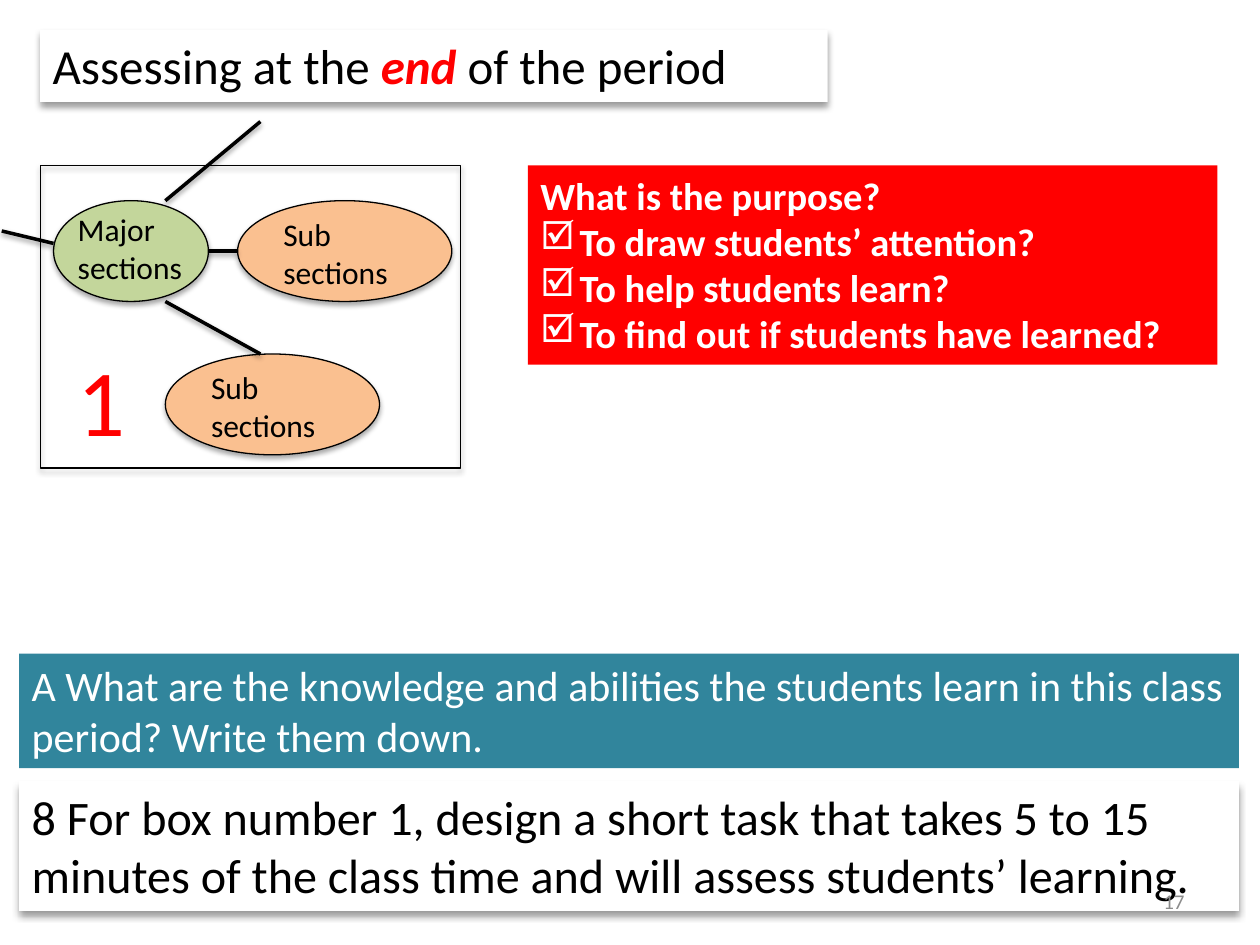
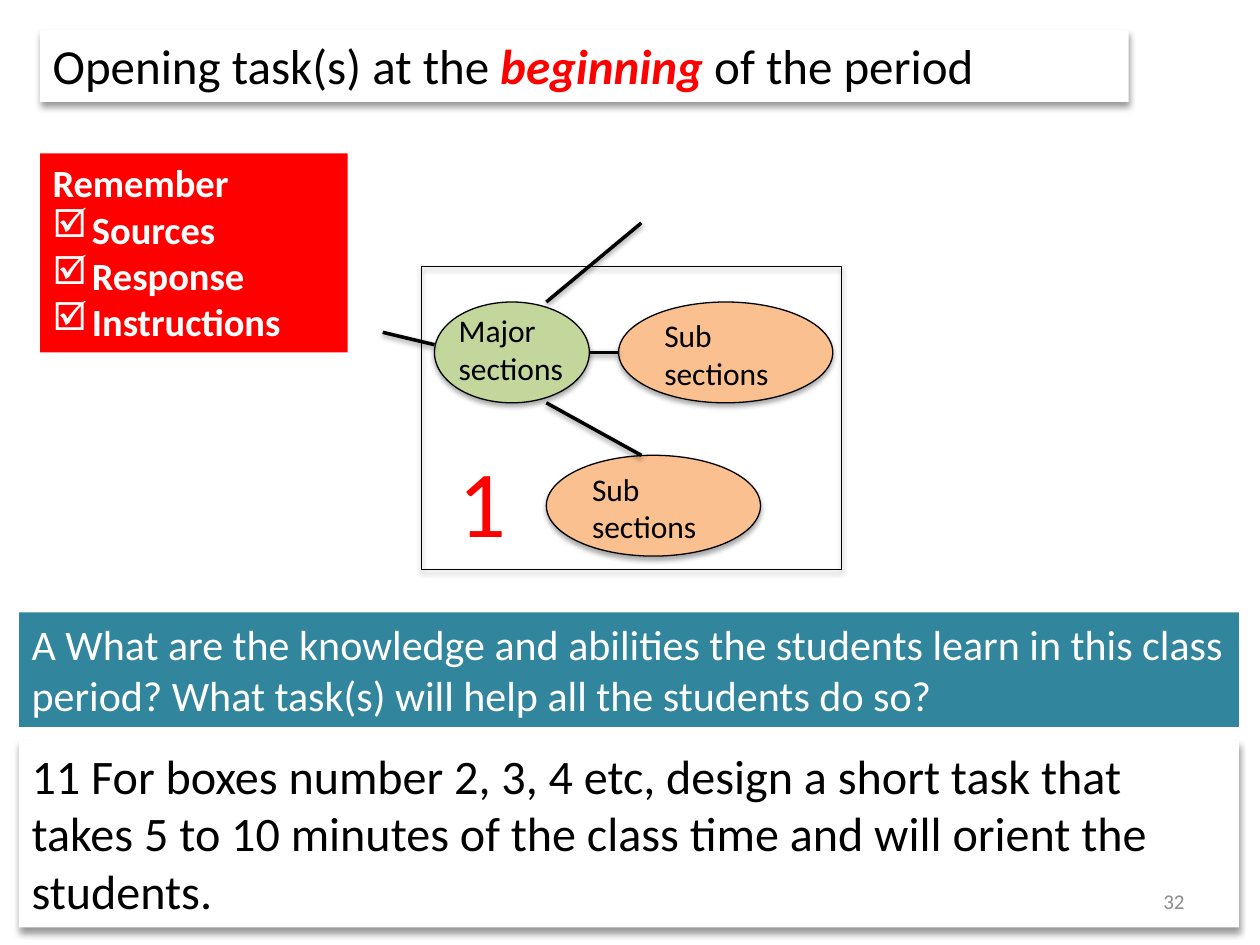
from lxml.etree import SubElement
from pptx import Presentation
from pptx.dml.color import RGBColor
from pptx.enum.shapes import MSO_CONNECTOR, MSO_SHAPE
from pptx.enum.text import MSO_ANCHOR, MSO_AUTO_SIZE, PP_ALIGN
from pptx.oxml.ns import qn
from pptx.util import Pt

BLACK = RGBColor(0x00, 0x00, 0x00)
WHITE = RGBColor(0xFF, 0xFF, 0xFF)
RED = RGBColor(0xFF, 0x00, 0x00)
TEAL = RGBColor(0x31, 0x85, 0x9C)
GREEN = RGBColor(0xC3, 0xD6, 0x9B)
PEACH = RGBColor(0xFA, 0xC0, 0x90)
GREY = RGBColor(0x8C, 0x8C, 0x8C)

# Shadows: opacity in percent, blur and distance in points
PANEL = (40, 4, 3)
SHAPE = (35, 3.1, 1.8)
LINE = (38, 3.1, 1.6)

MARGIN = 23
BAND_LEFT, BAND_WIDTH = 11, 697
FRAME = (240, 173)
MAJOR = (88.5, 57.6)
SUB = (122.4, 57.6)
LABEL = (76.4, 51)


def write(shape, text, size=18, color=BLACK, bold=False, bullet=None,
          align=PP_ALIGN.LEFT, anchor=MSO_ANCHOR.TOP, grow=True):
    """One paragraph a line; *starred* words are red, bold and italic.

    With a bullet, every line after the first is a list item.
    """
    frame = shape.text_frame
    frame.word_wrap = True
    frame.vertical_anchor = anchor
    if grow:
        frame.auto_size = MSO_AUTO_SIZE.SHAPE_TO_FIT_TEXT
    for row, line in enumerate(text.split("\n")):
        para = frame.paragraphs[0] if row == 0 else frame.add_paragraph()
        para.alignment = align
        if bullet and row:
            props = para._p.get_or_add_pPr()
            props.set("marL", str(Pt(22.5)))
            props.set("indent", str(-Pt(22.5)))
            SubElement(props, qn("a:buChar"), char=bullet)
        for part, words in enumerate(line.split("*")):
            strong = part % 2 == 1
            run = para.add_run()
            run.text = words
            font = run.font
            font.name = "Calibri"
            font.size = Pt(size)
            font.bold = bold or strong
            font.italic = strong
            font.color.rgb = RED if strong else color


def shade(effects, shadow):
    alpha, blur, dist = shadow
    outer = SubElement(effects, qn("a:outerShdw"), blurRad=str(Pt(blur)),
                       dist=str(Pt(dist)), dir="5400000", rotWithShape="0")
    color = SubElement(outer, qn("a:srgbClr"), val=str(BLACK))
    SubElement(color, qn("a:alpha"), val=str(alpha * 1000))


class Deck:
    def __init__(self):
        self.show = Presentation()
        self.show.slide_width = Pt(720)
        self.show.slide_height = Pt(540)
        self.slide = None

    def page(self):
        self.slide = self.show.slides.add_slide(self.show.slide_layouts[6])

    def shape(self, kind, left, top, area, fill=None, line=None, shadow=None):
        wide, high = area
        shape = self.slide.shapes.add_shape(
            kind, Pt(left), Pt(top), Pt(wide), Pt(high))
        if fill is None:
            shape.fill.background()
        else:
            shape.fill.solid()
            shape.fill.fore_color.rgb = fill
        if line is None:
            shape.line.fill.background()
        else:
            shape.line.color.rgb = line
            shape.line.width = Pt(0.75)
        shape.shadow.inherit = False
        if shadow:
            shade(shape._element.spPr.find(qn("a:effectLst")), shadow)
        return shape

    def label(self, text, left, top, area, **style):
        wide, high = area
        box = self.slide.shapes.add_textbox(
            Pt(left), Pt(top), Pt(wide), Pt(high))
        write(box, text, **style)

    def panel(self, text, left, top, area, fill=WHITE, shadow=None, **style):
        box = self.shape(MSO_SHAPE.RECTANGLE, left, top, area, fill,
                         shadow=shadow)
        write(box, text, **style)

    def line(self, start, end):
        link = self.slide.shapes.add_connector(
            MSO_CONNECTOR.STRAIGHT, *map(Pt, start + end))
        link.line.color.rgb = BLACK
        link.line.width = Pt(2)
        shade(SubElement(link._element.spPr, qn("a:effectLst")), LINE)

    def oval(self, left, top, area, fill):
        self.shape(MSO_SHAPE.OVAL, left, top, area, fill, BLACK, SHAPE)

    def title(self, text, wide):
        self.panel(text, MARGIN, 17, (wide, 41.2), shadow=PANEL, size=28)

    def checks(self, text, left, top, wide):
        self.panel(text, left, top, (wide, 113.8), RED, size=22,
                   color=WHITE, bold=True, bullet="☑")

    def map(self, left, top):
        """Numbered box of major and sub sections, placed by its corner."""
        row = top + 20.2
        mid = row + SUB[1] / 2
        base = row + SUB[1]
        low = top + 107.8
        hub = left + 7.6
        stem, tip = left + 71.5, left + 125.8
        side = left + 112.8

        self.oval(side, row, SUB, PEACH)
        self.line((left + 94, mid), (side, mid))
        self.line((stem, row), (tip, top - 25))
        self.oval(stem, low, SUB, PEACH)
        self.line((stem, base), (tip, low))
        self.oval(hub, row, MAJOR, GREEN)
        self.line((left - 22, top + 37.5), (hub, top + 44.6))

        self.label("Major sections", left + 14.3, row + 1.8, LABEL)
        for x, y in ((side, row + 4.6), (stem, low + 4.6)):
            self.label("Sub\nsections", x + 19, y, LABEL)
        self.shape(MSO_SHAPE.RECTANGLE, left, top, FRAME, None, BLACK, SHAPE)
        self.label("1", left + 14.3, top + 97.2, (53, 72.7),
                   size=54, color=RED)

    def tasks(self, ask, task, top, high):
        """Teal question band with the white task panel under it."""
        self.panel(task, BAND_LEFT, top + 72.8, (BAND_WIDTH, high),
                   shadow=PANEL, size=27.5)
        self.panel(ask, BAND_LEFT, top, (BAND_WIDTH, 65.4), TEAL,
                   size=24, color=WHITE)

    def number(self, value):
        self.label(str(value), 516, 500.5, (168, 28.8), size=12, color=GREY,
                   align=PP_ALIGN.RIGHT, anchor=MSO_ANCHOR.MIDDLE, grow=False)


def main():
    deck = Deck()
    ask = ("A What are the knowledge and abilities the students learn "
           "in this class period? ")

    deck.page()
    deck.title("Assessing at the *end *of the period", 450)
    deck.map(MARGIN, 94.5)
    deck.tasks(ask + "Write them down.",
               "8 For box number 1, design a short task that takes 5 to 15 "
               "minutes of the class time and will assess students’ learning.",
               373.5, 74.2)
    deck.number(17)
    deck.checks("What is the purpose?\nTo draw students’ attention?\n"
                "To help students learn?\n"
                "To find out if students have learned?", 301.7, 94.5, 394)

    deck.page()
    deck.title("Opening task(s) at the *beginning *of the period", 622)
    deck.map(240.7, 152.4)
    deck.tasks(ask + "What task(s) will help all the students do so?",
               "11 For boxes number 2, 3, 4 etc, design a short task that "
               "takes 5 to 10 minutes of the class time and will orient "
               "the students.", 350, 107.2)
    deck.checks("Remember\nSources\nResponse\nInstructions",
                MARGIN, 87.6, 175.7)
    deck.number(32)

    deck.show.save("out.pptx")


if __name__ == "__main__":
    main()
